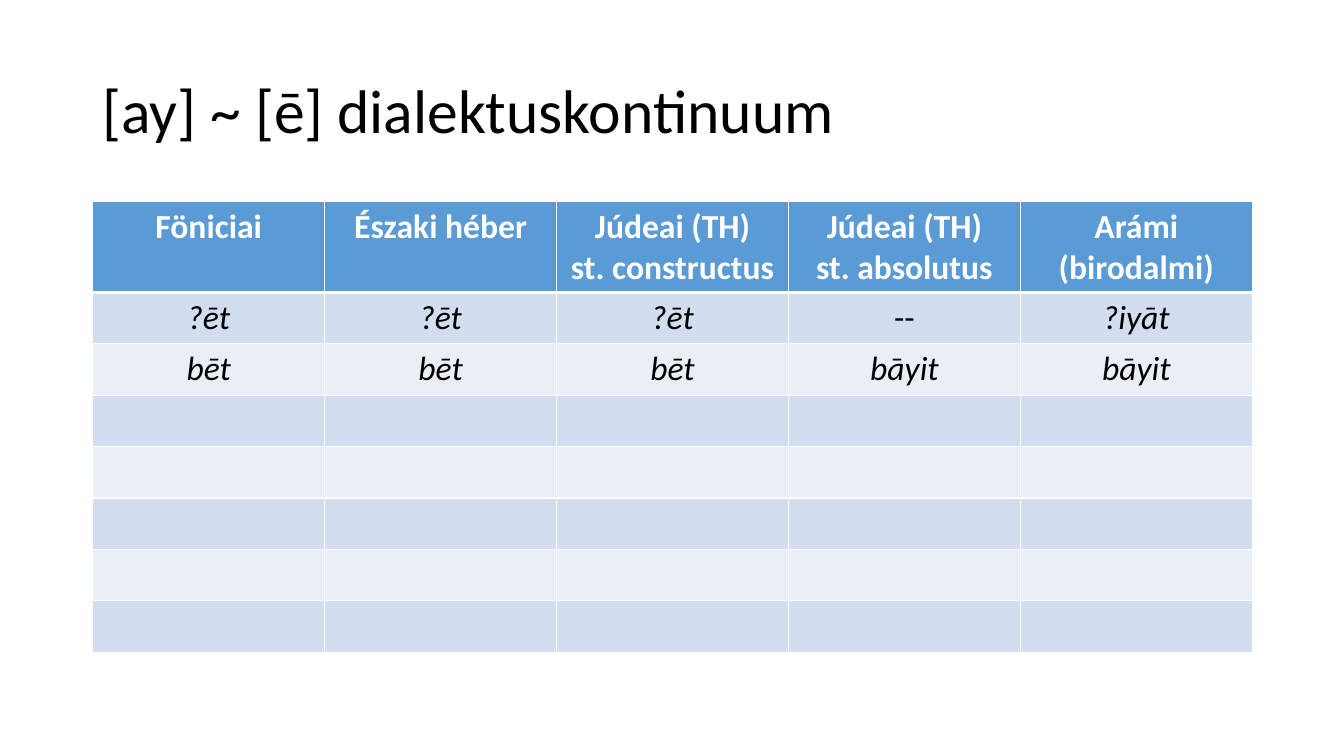
from lxml import etree
from pptx import Presentation
from pptx import util as u
from pptx.dml.color import RGBColor
from pptx.enum import text
from pptx.oxml import ns


def style_run(run, size, color, bold=False, italic=False):
    run.font.name = "Calibri"
    run.font.size = u.Pt(size)
    run.font.bold = bold
    run.font.italic = italic
    run.font.color.rgb = RGBColor.from_string(color)


def add_border(cell, side, points, color):
    line = etree.SubElement(cell._tc.get_or_add_tcPr(), ns.qn("a:" + side), w=str(u.Pt(points)))
    fill = etree.SubElement(line, ns.qn("a:solidFill"))
    etree.SubElement(fill, ns.qn("a:srgbClr"), val=color)


prs = Presentation()
prs.slide_width = u.Inches(13.33)
prs.slide_height = u.Inches(7.5)
slide = prs.slides.add_slide(prs.slide_layouts[6])

# Title
title = slide.shapes.add_textbox(u.Inches(0.92), u.Inches(0.4), u.Inches(11.5), u.Inches(1.45)).text_frame
title.word_wrap = True
title.vertical_anchor = text.MSO_ANCHOR.MIDDLE
heading = title.paragraphs[0]
heading.line_spacing = 0.9
run = heading.add_run()
run.text = "[ay] ~ [ē] dialektuskontinuum"
style_run(run, 44, "000000")

# Table content: each cell is a list of paragraphs, "\v" is a line break
dialects = [["Föniciai"], ["Északi héber"], ["Júdeai (TH)", "st. constructus"],
            ["Júdeai (TH)", "st. absolutus"], ["Arámi\v(birodalmi)"]]
words = [["?ēt", "?ēt", "?ēt", "--", "?iyāt"],
         ["bēt", "bēt", "bēt", "bāyit", "bāyit"]]
empty_rows = 5
rows = [dialects] + [[[word] for word in row] for row in words] + [[[]] * 5] * empty_rows

# Table grid
table = slide.shapes.add_table(len(rows), len(dialects), u.Inches(0.92), u.Inches(2),
                               u.Inches(11.5), u.Inches(4.47)).table
for column in table.columns:
    column.width = u.Inches(2.3)

for r, row in enumerate(rows):
    header = r == 0
    table.rows[r].height = u.Inches(0.9 if header else 0.51)
    for c, lines in enumerate(row):
        cell = table.cell(r, c)

        # Borders and fill
        for side in ("lnL", "lnR", "lnT", "lnB"):
            thick = (r, side) in ((0, "lnB"), (1, "lnT"))
            add_border(cell, side, 3 if thick else 1, "FFFFFF")
        cell.fill.solid()
        band = "5B9BD5" if header else ("EAEFF7", "D2DEEF")[r % 2]
        cell.fill.fore_color.rgb = RGBColor.from_string(band)

        # Wording
        for i, line in enumerate(lines):
            frame = cell.text_frame
            paragraph = frame.add_paragraph() if i else frame.paragraphs[0]
            paragraph.alignment = text.PP_ALIGN.CENTER
            for j, part in enumerate(line.split("\v")):
                if j:
                    paragraph.add_line_break()
                run = paragraph.add_run()
                run.text = part
                style_run(run, 24, "FFFFFF" if header else "000000", bold=header,
                          italic=not header and part != "--")

prs.save("out.pptx")
